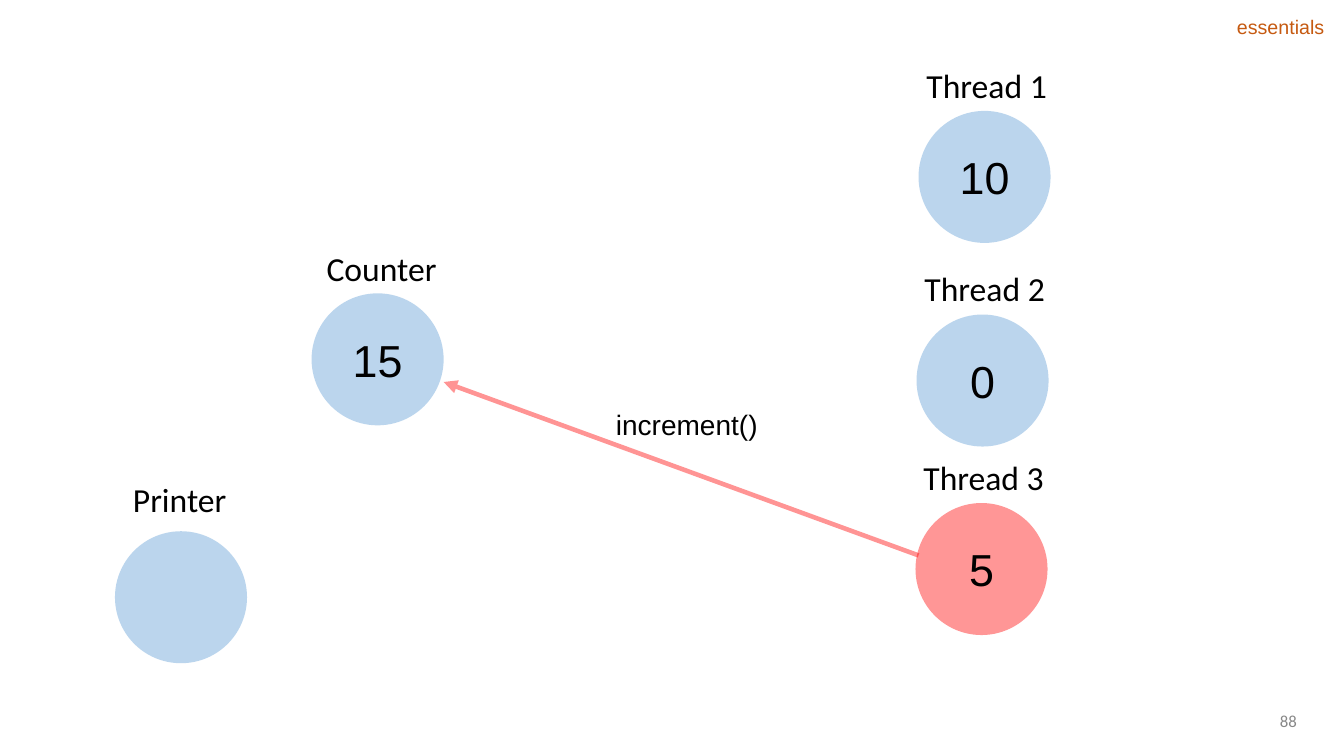
import pptx
import pptx.util
import pptx.dml.color
import pptx.enum.shapes
import pptx.enum.text
import pptx.oxml
import pptx.oxml.ns
from lxml import etree

Inches = pptx.util.Inches
RGBColor = pptx.dml.color.RGBColor
ALIGN = pptx.enum.text.PP_ALIGN
ANCHOR = pptx.enum.text.MSO_ANCHOR

BLUE = RGBColor(0x5B, 0x9B, 0xD5)
RED = RGBColor(0xFF, 0x00, 0x00)
BLACK = RGBColor(0x00, 0x00, 0x00)
GRAY = RGBColor(0x88, 0x88, 0x88)
ORANGE = RGBColor(0xC6, 0x5A, 0x11)

DIAMETER = 1.31
LABEL_HEIGHT = 0.5

# name, value, circle left, circle top, colour, label shift right, label rise, label width
OBJECTS = [
    ("Counter", "15", 3.09, 2.91, BLUE, 0.05, 0.5, 1.31),
    ("Thread 1", "10", 9.11, 1.1, BLUE, -0.02, 0.51, 1.41),
    ("Thread 2", "0", 9.09, 3.12, BLUE, -0.02, 0.51, 1.41),
    ("Thread 3", "5", 9.08, 4.99, RED, -0.02, 0.51, 1.41),
    ("Printer", "", 1.14, 5.27, BLUE, 0.08, 0.57, 1.15),
]


def write_text(tf, text, size=24, font="Calibri", color=BLACK, align=ALIGN.LEFT,
               anchor=ANCHOR.TOP, wrap=True):
    tf.word_wrap = wrap
    tf.vertical_anchor = anchor
    p = tf.paragraphs[0]
    p.alignment = align
    r = p.add_run()
    r.text = text
    r.font.size = pptx.util.Pt(size)
    r.font.name = font
    r.font.color.rgb = color


def add_text(slide, box, text, **fmt):
    sp = slide.shapes.add_textbox(*map(Inches, box))
    write_text(sp.text_frame, text, **fmt)


def set_opacity(sp, percent):
    """Make every solid colour in the shape's own properties translucent."""
    for color in sp._element.spPr.iter(pptx.oxml.ns.qn("a:srgbClr")):
        alpha = etree.SubElement(color, pptx.oxml.ns.qn("a:alpha"))
        alpha.set("val", str(percent * 1000))


def add_object(slide, name, value, left, top, color, shift, rise, label_width):
    """Draw a circle holding its value, with its name above."""
    box = (left, top, DIAMETER, DIAMETER)
    sp = slide.shapes.add_shape(pptx.enum.shapes.MSO_SHAPE.OVAL, *map(Inches, box))
    sp.shadow.inherit = False
    sp.fill.solid()
    sp.fill.fore_color.rgb = color
    sp.line.fill.background()
    set_opacity(sp, 41)
    if value:
        write_text(sp.text_frame, value, size=32, font="Arial",
                   align=ALIGN.CENTER, anchor=ANCHOR.MIDDLE)
    add_text(slide, (left + shift, top - rise, label_width, LABEL_HEIGHT), name)


def add_call(slide, start, end, label, label_box):
    """Draw a labelled arrow from the caller to the object it calls."""
    line = slide.shapes.add_connector(
        pptx.enum.shapes.MSO_CONNECTOR.STRAIGHT, *map(Inches, start + end))
    line.line.color.rgb = RED
    line.line.width = pptx.util.Pt(3.25)
    set_opacity(line, 42)
    tail = etree.SubElement(line.line._get_or_add_ln(), pptx.oxml.ns.qn("a:tailEnd"))
    tail.set("type", "triangle")
    etree.SubElement(line._element.spPr, pptx.oxml.ns.qn("a:effectLst"))
    add_text(slide, label_box, label, size=20, font="Arial")


def add_thread_slide(prs):
    slide = prs.slides.add_slide(prs.slide_layouts[6])
    add_text(slide, (9.42, 6.95, 3.54, 0.4), "88", size=12, color=GRAY,
             align=ALIGN.RIGHT, anchor=ANCHOR.MIDDLE)
    for item in OBJECTS:
        add_object(slide, *item)
    add_call(slide, (9.11, 5.51), (4.4, 3.79), "increment()", (6.01, 3.99, 1.62, 0.44))
    add_text(slide, (12.17, 0.1, 1.07, 0.34), "essentials", size=14, font="Arial",
             color=ORANGE, wrap=False)


def main():
    prs = pptx.Presentation()
    prs.slide_width = Inches(13.33)
    prs.slide_height = Inches(7.5)
    add_thread_slide(prs)
    prs.save("out.pptx")


if __name__ == "__main__":
    main()
